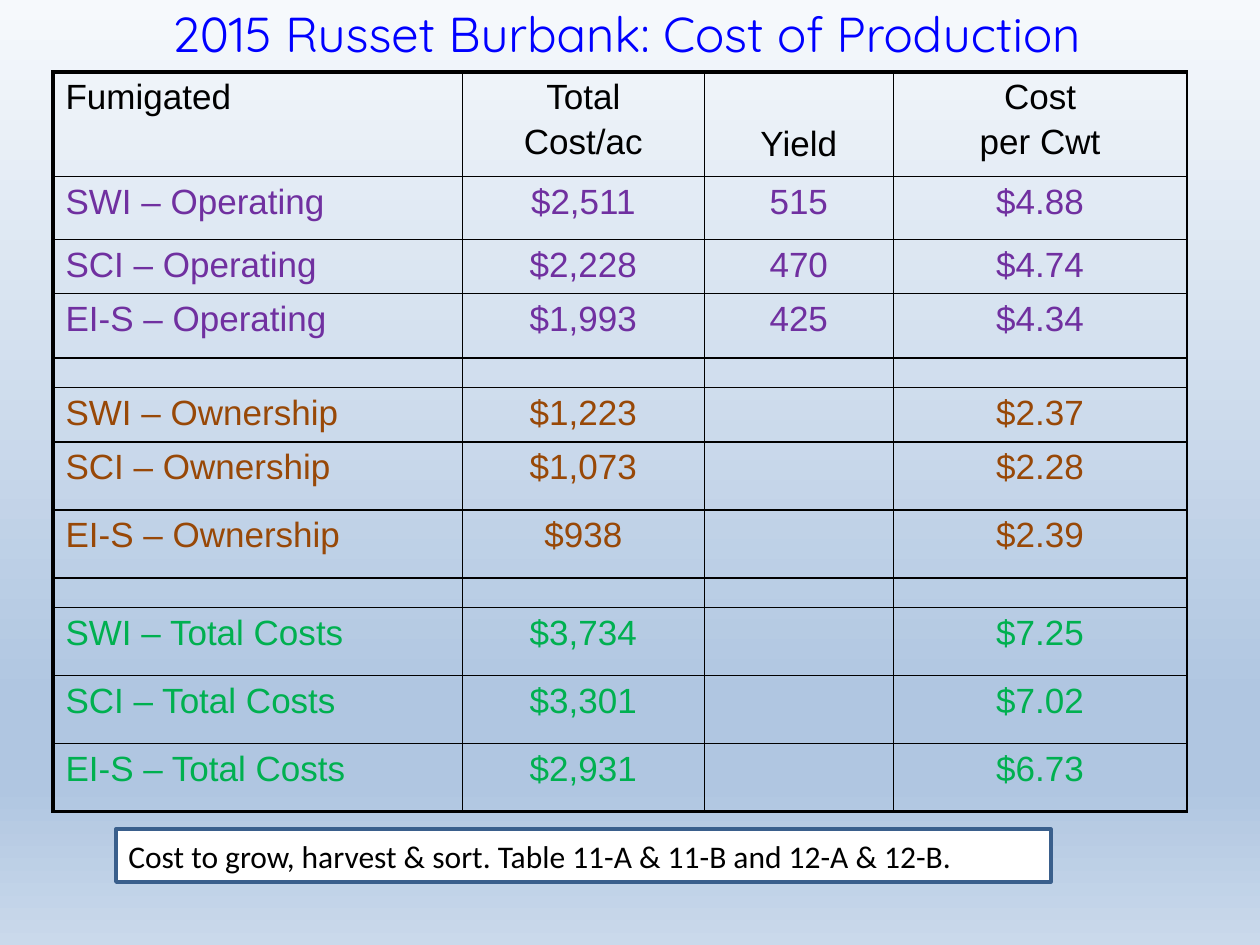
from lxml import etree
from pptx import Presentation
from pptx import util as u
from pptx.dml.color import RGBColor
from pptx.enum import shapes, text
from pptx.oxml.ns import qn

TITLE = "2015 Russet Burbank: Cost of Production"
NOTE = "Cost to grow, harvest & sort. Table 11-A & 11-B and 12-A & 12-B."
COLORS = {
    "title": "0000FF", "black": "000000", "white": "FFFFFF", "note_line": "3A5F8C",
    "operating": "7030A0", "ownership": "984807", "total": "00B050",
}
BACKGROUND = [(0, "F6F9FC"), (74, "B0C6E1"), (83, "B0C6E1"), (100, "CAD9EB")]
COLUMN_WIDTHS = [3.25, 1.92, 1.5, 2.33]
ROWS = [
    (0.83, "black", ["Fumigated", "Total\nCost/ac", "Yield", "Cost\nper Cwt"]),
    (0.5, "operating", ["SWI – Operating", "$2,511", "515", "$4.88"]),
    (0.43, "operating", ["SCI – Operating", "$2,228", "470", "$4.74"]),
    (0.51, "operating", ["EI-S – Operating", "$1,993", "425", "$4.34"]),
    (0.23, "black", [""] * 4),
    (0.43, "ownership", ["SWI – Ownership", "$1,223", "", "$2.37"]),
    (0.54, "ownership", ["SCI – Ownership", "$1,073", "", "$2.28"]),
    (0.54, "ownership", ["EI-S – Ownership", "$938", "", "$2.39"]),
    (0.23, "black", [""] * 4),
    (0.54, "total", ["SWI – Total Costs", "$3,734", "", "$7.25"]),
    (0.54, "total", ["SCI – Total Costs", "$3,301", "", "$7.02"]),
    (0.54, "total", ["EI-S – Total Costs", "$2,931", "", "$6.73"]),
]


def rgb(name):
    return RGBColor.from_string(COLORS[name])


def write(frame, content, size=20, font="Arial", color="black", centered=False, before=0):
    for index, line in enumerate(content.split("\n")):
        paragraph = frame.paragraphs[0] if index == 0 else frame.add_paragraph()
        paragraph.alignment = text.PP_ALIGN.CENTER if centered else text.PP_ALIGN.LEFT
        paragraph.space_before = u.Pt(before)
        run = paragraph.add_run()
        run.text = line
        run.font.size = u.Pt(size)
        run.font.name = font
        run.font.color.rgb = rgb(color)


def paint_background(slide):
    fill = slide.background.fill
    fill.gradient()
    fill.gradient_angle = 270
    stops = next(slide.element.iter(qn("a:gsLst")))
    for stop in list(stops):
        stops.remove(stop)
    for position, color in BACKGROUND:
        stop = etree.SubElement(stops, qn("a:gs"), pos=str(position * 1000))
        etree.SubElement(stop, qn("a:srgbClr"), val=color)


def add_borders(cell, widths):
    properties = cell._tc.get_or_add_tcPr()
    for side, width in widths.items():
        line = etree.SubElement(properties, qn(f"a:ln{side}"), w=str(u.Pt(width)))
        fill = etree.SubElement(line, qn("a:solidFill"))
        etree.SubElement(fill, qn("a:srgbClr"), val=COLORS["black"])


def add_costs(slide):
    height = sum(row[0] for row in ROWS)
    costs = slide.shapes.add_table(
        len(ROWS), len(COLUMN_WIDTHS), u.Inches(0.42), u.Inches(0.57),
        u.Inches(sum(COLUMN_WIDTHS)), u.Inches(height)).table
    costs.first_row = costs.horz_banding = False
    for column, width in zip(costs.columns, COLUMN_WIDTHS):
        column.width = u.Inches(width)
    last = len(ROWS) - 1
    for r, (row_height, color, entries) in enumerate(ROWS):
        costs.rows[r].height = u.Inches(row_height)
        for c, entry in enumerate(entries):
            cell = costs.cell(r, c)
            add_borders(cell, {"L": 1 if c else 2.25, "R": 1,
                               "T": 1 if r else 2.25, "B": 2.25 if r == last else 1})
            cell.fill.background()
            if entry:
                write(cell.text_frame, entry, color=color, centered=c > 0, before=3.5)
            else:
                etree.SubElement(cell.text_frame.paragraphs[0]._p, qn("a:endParaRPr"), sz="800")
            if entry == "Yield":
                cell.margin_top = u.Inches(0.42)


def main():
    deck = Presentation()
    deck.slide_width, deck.slide_height = u.Inches(10), u.Inches(7.5)
    slide = deck.slides.add_slide(deck.slide_layouts[5])
    paint_background(slide)
    add_costs(slide)

    title = slide.shapes.title
    title.left, title.top = u.Inches(0.52), u.Inches(-0.02)
    title.width, title.height = u.Inches(8.9), u.Inches(0.57)
    title.text_frame.vertical_anchor = text.MSO_ANCHOR.MIDDLE
    write(title.text_frame, TITLE, size=28, font="Quicksand", color="title", centered=True)

    note = slide.shapes.add_shape(shapes.MSO_SHAPE.RECTANGLE, u.Inches(0.92),
                                  u.Inches(6.58), u.Inches(7.42), u.Inches(0.42))
    note.shadow.inherit = False
    note.fill.solid()
    note.fill.fore_color.rgb = rgb("white")
    note.line.color.rgb = rgb("note_line")
    note.line.width = u.Pt(2)
    note.text_frame.vertical_anchor = text.MSO_ANCHOR.MIDDLE
    write(note.text_frame, NOTE, size=18, font="Calibri")
    deck.save("out.pptx")


if __name__ == "__main__":
    main()
